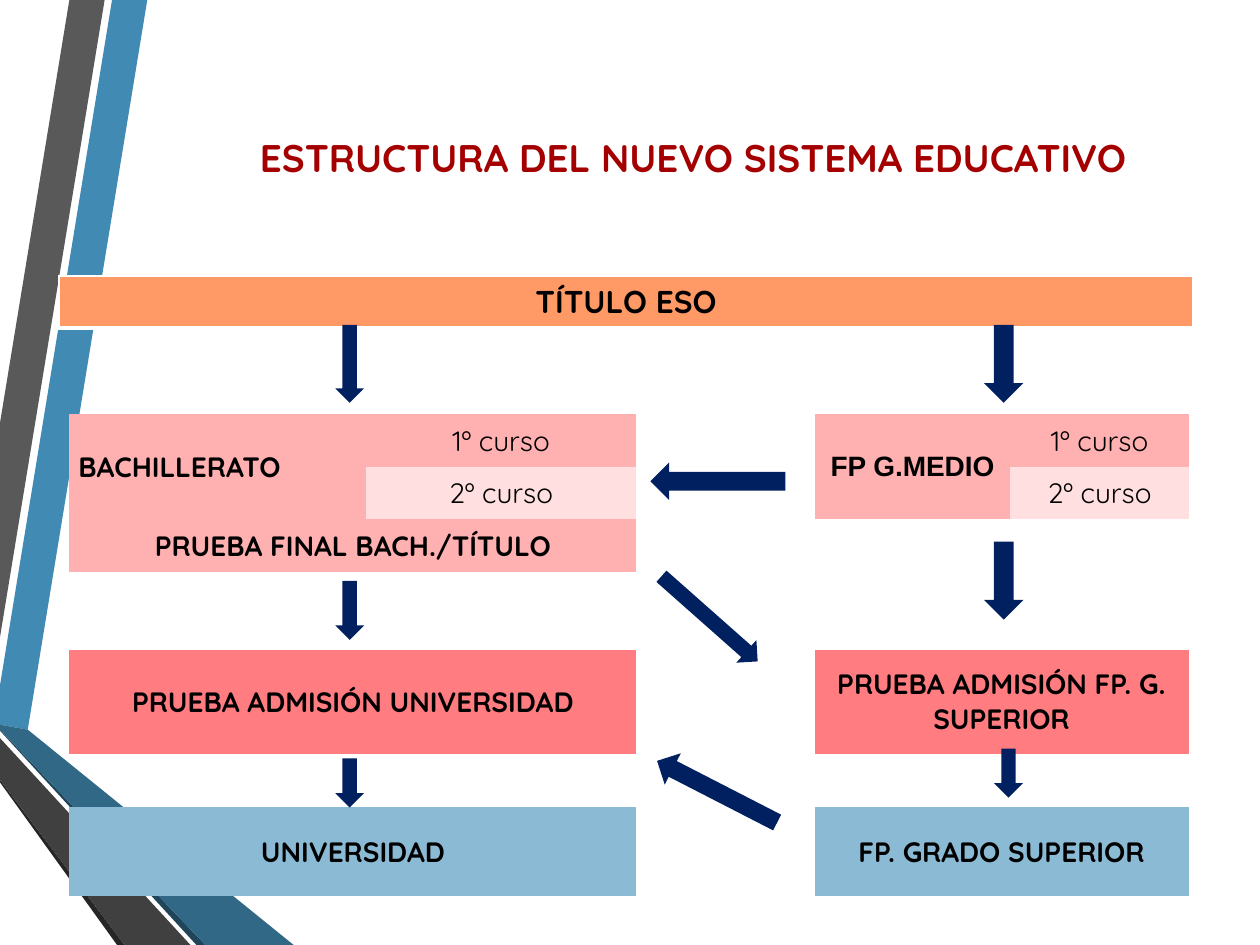
"""Build the slide on the structure of the new education system."""
from dataclasses import dataclass
from typing import Optional

from lxml.etree import SubElement
from pptx import Presentation
from pptx.dml.color import RGBColor
from pptx.enum.shapes import MSO_SHAPE
from pptx.enum.text import MSO_ANCHOR, PP_ALIGN
from pptx.oxml.ns import qn
from pptx.util import Cm, Pt

BLACK = RGBColor(0x00, 0x00, 0x00)
CRIMSON = RGBColor(0xA4, 0x00, 0x00)
NAVY = RGBColor(0x00, 0x20, 0x60)
ORANGE = RGBColor(0xFF, 0x99, 0x66)
PINK = RGBColor(0xFF, 0xB0, 0xB0)
PALE_PINK = RGBColor(0xFF, 0xDF, 0xDF)
CORAL = RGBColor(0xFF, 0x7C, 0x80)
SKY = RGBColor(0x8A, 0xBA, 0xD4)
BLUE = RGBColor(0x41, 0x8A, 0xB3)
DEEP_BLUE = RGBColor(0x31, 0x68, 0x86)
DARK_BLUE = RGBColor(0x20, 0x45, 0x5A)
GREY = RGBColor(0x59, 0x59, 0x59)
DARK_GREY = RGBColor(0x40, 0x40, 0x40)
CHARCOAL = RGBColor(0x26, 0x26, 0x26)
PLAIN_STYLE = "{2D5ABB26-0587-4C30-8999-92F81FD0307C}"


@dataclass
class Ribbon:
    color: RGBColor
    points: list


@dataclass
class Stage:
    row: int
    column: int
    text: str = ""
    fill: Optional[RGBColor] = None
    rows: int = 1
    columns: int = 1
    bold: bool = True
    font: str = "Quicksand"
    align: PP_ALIGN = PP_ALIGN.CENTER


@dataclass
class Arrow:
    left: float
    top: float
    width: float
    height: float
    rotation: float = 0
    preset: MSO_SHAPE = MSO_SHAPE.DOWN_ARROW


RIBBONS = [
    Ribbon(BLUE, [(0, 13.82), (0, 14.61), (0.56, 14.71), (2.97, 0), (2.26, 0)]),
    Ribbon(GREY, [(2.11, 0), (1.4, 0), (0, 8.53), (0, 12.85)]),
    Ribbon(CHARCOAL, [(0, 15.72), (0, 15.77), (2.36, 19.05), (2.51, 19.05)]),
    Ribbon(DARK_BLUE, [(0, 14.71), (0, 14.73), (3.96, 19.05), (4.14, 19.05)]),
    Ribbon(DEEP_BLUE, [(0, 14.71), (4.14, 19.05), (5.92, 19.05), (0.56, 14.71), (0, 14.61)]),
    Ribbon(DARK_GREY, [(0, 15.72), (2.51, 19.05), (3.84, 19.05), (0, 14.88)]),
]
COLUMNS = [5.49, 0.48, 5.46, 3.59, 3.95, 3.59]
ROWS = [0.55, 1.07, 1.06, 1.06, 1.06, 1.57, 2.1, 1.07, 1.79]
STAGES = [
    Stage(0, 0, columns=6),
    Stage(1, 1, columns=5),
    Stage(2, 0, "BACHILLERATO", PINK, rows=2, columns=2, align=PP_ALIGN.LEFT),
    Stage(2, 2, "1º curso", PINK, bold=False),
    Stage(3, 2, "2º curso", PALE_PINK, bold=False),
    Stage(2, 4, "FP G.MEDIO", PINK, rows=2, font="Arial"),
    Stage(2, 5, "1º curso", PINK, bold=False),
    Stage(3, 5, "2º curso", PALE_PINK, bold=False),
    Stage(4, 0, "PRUEBA FINAL BACH./TÍTULO", PINK, columns=3),
    Stage(4, 4, columns=2),
    Stage(5, 0, columns=2),
    Stage(5, 4, columns=2),
    Stage(6, 0, "PRUEBA ADMISIÓN UNIVERSIDAD", CORAL, columns=3),
    Stage(6, 4, "PRUEBA ADMISIÓN FP. G. SUPERIOR", CORAL, columns=2),
    Stage(7, 0, columns=2),
    Stage(7, 4, columns=2),
    Stage(8, 0, "UNIVERSIDAD", SKY, columns=3),
    Stage(8, 4, "FP. GRADO SUPERIOR", SKY, columns=2),
]
ARROWS = [
    Arrow(6.76, 6.55, 0.58, 1.57),
    Arrow(19.84, 6.55, 0.79, 1.57),
    Arrow(13.11, 9.32, 2.72, 0.76, 180, MSO_SHAPE.RIGHT_ARROW),
    Arrow(19.84, 10.92, 0.79, 1.57),
    Arrow(20.04, 15.09, 0.58, 0.99),
    Arrow(6.76, 11.71, 0.58, 1.19),
    Arrow(6.76, 15.29, 0.58, 0.99),
    Arrow(14, 11.18, 0.61, 2.59, 311.5),
    Arrow(14.1, 14.6, 0.71, 2.72, 117.2),
]


def write(paragraph, text: str, size: float, color: RGBColor, bold: bool = True,
          font: str = "Quicksand", align: PP_ALIGN = PP_ALIGN.CENTER) -> None:
    paragraph.alignment = align
    run = paragraph.add_run()
    run.text = text
    for name, value in {"size": Pt(size), "bold": bold, "name": font}.items():
        setattr(run.font, name, value)
    run.font.color.rgb = color


def paint(shape, color: RGBColor) -> None:
    shape.shadow.inherit = False
    shape.fill.solid()
    shape.fill.fore_color.rgb = color
    shape.line.fill.background()


def draw_ribbon(shapes, ribbon: Ribbon) -> None:
    start, *rest = [(Cm(x), Cm(y)) for x, y in ribbon.points]
    builder = shapes.build_freeform(*start)
    builder.add_line_segments(rest, close=True)
    paint(builder.convert_to_shape(), ribbon.color)


def draw_arrow(shapes, arrow: Arrow) -> None:
    box = map(Cm, (arrow.left, arrow.top, arrow.width, arrow.height))
    pointer = shapes.add_shape(arrow.preset, *box)
    pointer.rotation = arrow.rotation
    paint(pointer, NAVY)


def add_grid(shapes, left: float, top: float, widths: list, heights: list):
    frame = shapes.add_table(len(heights), len(widths), Cm(left), Cm(top),
                             Cm(sum(widths)), Cm(sum(heights)))
    grid = frame.table
    grid.first_row = grid.horz_banding = False
    grid._tbl.tblPr.find(qn("a:tableStyleId")).text = PLAIN_STYLE
    for column, width in zip(grid.columns, widths):
        column.width = Cm(width)
    for row, height in zip(grid.rows, heights):
        row.height = Cm(height)
    return grid


def draw_heading_bar(shapes) -> None:
    cell = add_grid(shapes, 1.19, 5.56, [22.86], [1.04]).cell(0, 0)
    write(cell.text_frame.paragraphs[0], "TÍTULO ESO", 18, BLACK)
    properties = cell._tc.get_or_add_tcPr()
    for side, points in {"lnL": 1, "lnR": 1, "lnT": 1, "lnB": 3}.items():
        border = SubElement(properties, qn(f"a:{side}"), w=str(Pt(points)))
        SubElement(SubElement(border, qn("a:solidFill")), qn("a:srgbClr"), val="FFFFFF")
    cell.fill.solid()
    cell.fill.fore_color.rgb = ORANGE


def draw_stages(shapes) -> None:
    grid = add_grid(shapes, 1.4, 6.73, COLUMNS, ROWS)
    layout = {"margin_left": Cm(0.18), "margin_right": Cm(0.18), "margin_top": 0,
              "margin_bottom": 0, "vertical_anchor": MSO_ANCHOR.MIDDLE}
    labelled = {(stage.row, stage.column) for stage in STAGES if stage.text}
    for row in range(len(ROWS)):
        for column in range(len(COLUMNS)):
            cell = grid.cell(row, column)
            for name, value in layout.items():
                setattr(cell, name, value)
            cell.fill.background()
            if (row, column) not in labelled:
                SubElement(cell.text_frame.paragraphs[0]._p, qn("a:endParaRPr"), sz="800")
    for stage in STAGES:
        cell = grid.cell(stage.row, stage.column)
        if stage.rows * stage.columns > 1:
            cell.merge(grid.cell(stage.row + stage.rows - 1, stage.column + stage.columns - 1))
        if stage.text:
            cell.fill.solid()
            cell.fill.fore_color.rgb = stage.fill
            write(cell.text_frame.paragraphs[0], stage.text, 16, BLACK,
                  stage.bold, stage.font, stage.align)


def main() -> None:
    deck = Presentation()
    deck.slide_width, deck.slide_height = Cm(25.4), Cm(19.05)
    shapes = deck.slides.add_slide(deck.slide_layouts[6]).shapes
    for ribbon in RIBBONS:
        draw_ribbon(shapes, ribbon)
    draw_heading_bar(shapes)
    title = shapes.add_textbox(Cm(2.54), Cm(1.57), Cm(22.86), Cm(3.18)).text_frame
    title.word_wrap = True
    title.vertical_anchor = MSO_ANCHOR.MIDDLE
    write(title.paragraphs[0], "ESTRUCTURA DEL NUEVO SISTEMA EDUCATIVO", 22, CRIMSON)
    draw_stages(shapes)
    for arrow in ARROWS:
        draw_arrow(shapes, arrow)
    deck.save("out.pptx")


if __name__ == "__main__":
    main()
